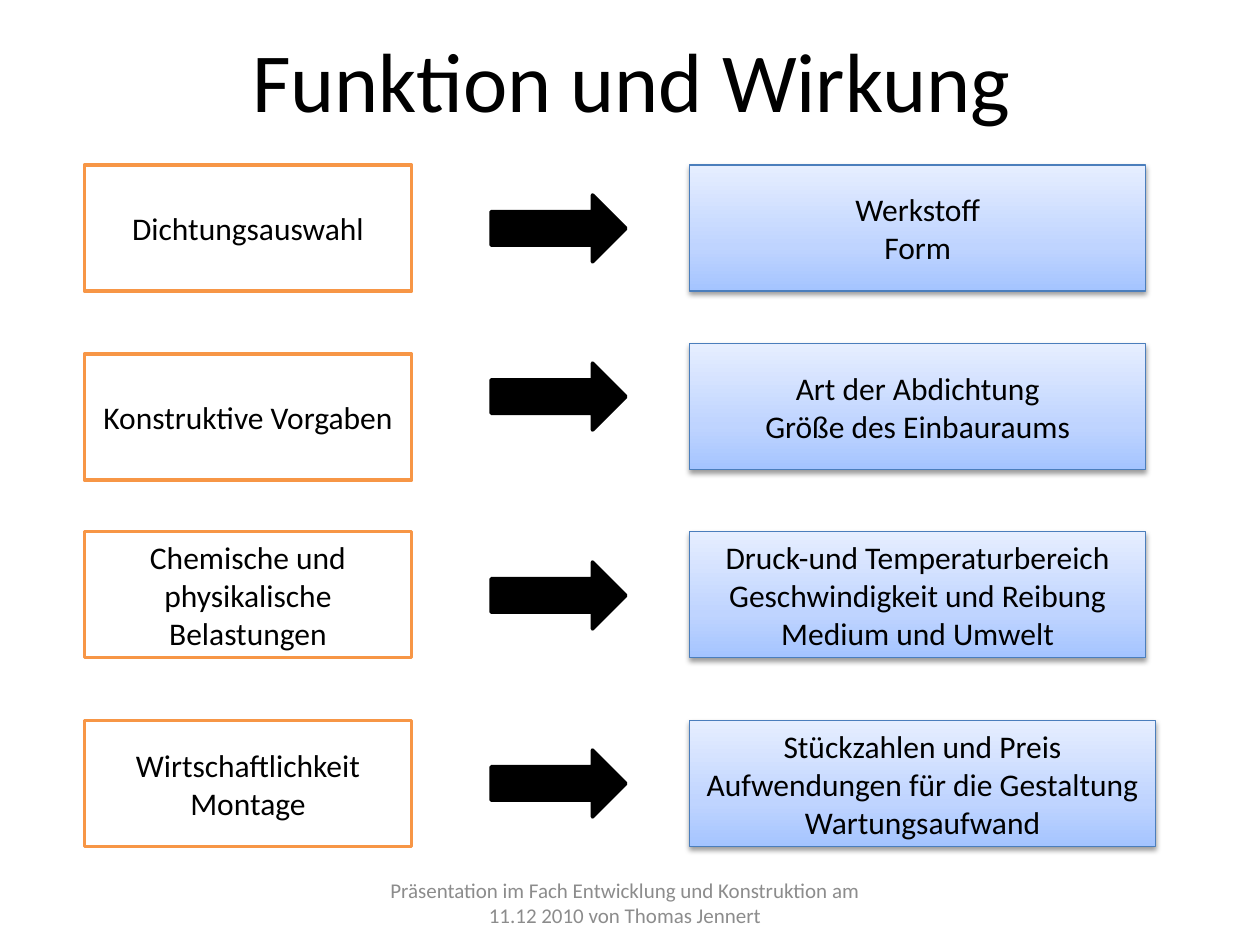
from pptx import Presentation
from pptx.dml.color import RGBColor
from pptx.enum.shapes import MSO_SHAPE as Shape
from pptx.enum.text import MSO_ANCHOR as Anchor, PP_ALIGN as Align
from pptx.oxml import parse_xml
from pptx.oxml.ns import nsdecls
from pptx.util import Cm, Pt

FONT = "Calibri"
BLACK, WHITE, GREY = "000000", "FFFFFF", "8C8C8C"
ORANGE, BLUE = "F79646", "4B7EBC"
GRADIENT_STOPS = [(0, "A4C4FF"), (35, "BFD4FF"), (100, "E6EEFF")]

TOPIC_LEFT, ARROW_LEFT, DETAIL_LEFT = 1.7, 9.9, 13.9
TOPIC_WIDTH, DETAIL_WIDTH, WIDE_DETAIL_WIDTH = 6.6, 9.2, 9.4
BOX_HEIGHT = 2.54

# topic, topic top, arrow top, details, details top, details width
ROWS = [
    ("Dichtungsauswahl", 3.33, 3.93,
     "Werkstoff\nForm", 3.33, DETAIL_WIDTH),
    ("Konstruktive Vorgaben", 7.14, 7.32,
     "Art der Abdichtung\nGröße des Einbauraums", 6.93, DETAIL_WIDTH),
    ("Chemische und physikalische Belastungen", 10.72, 11.33,
     "Druck-und Temperaturbereich\nGeschwindigkeit und Reibung\nMedium und Umwelt",
     10.72, DETAIL_WIDTH),
    ("Wirtschaftlichkeit Montage", 14.53, 15.12,
     "Stückzahlen und Preis\nAufwendungen für die Gestaltung\nWartungsaufwand",
     14.53, WIDE_DETAIL_WIDTH),
]


def color(hex_value):
    return RGBColor.from_string(hex_value)


def set_text(shape, text, size, text_color=BLACK):
    frame = shape.text_frame
    frame.text = text
    frame.word_wrap = True
    frame.vertical_anchor = Anchor.MIDDLE
    for paragraph in frame.paragraphs:
        paragraph.alignment = Align.CENTER
        for run in paragraph.runs:
            run.font.name = FONT
            run.font.size = Pt(size)
            run.font.color.rgb = color(text_color)


def add_outlined_shape(slide, kind, left, top, width, height, line_color, line_width):
    shape = slide.shapes.add_shape(kind, Cm(left), Cm(top), Cm(width), Cm(height))
    shape.line.color.rgb = color(line_color)
    shape.line.width = Pt(line_width)
    shape.shadow.inherit = False
    return shape


def fill_solid(shape, hex_value):
    shape.fill.solid()
    shape.fill.fore_color.rgb = color(hex_value)


def fill_gradient(shape):
    """Three stops, running from the bottom edge to the top."""
    shape.fill.gradient()
    shape.fill.gradient_angle = 90
    stops = "".join(
        f'<a:gs pos="{position * 1000}"><a:srgbClr val="{stop}"/></a:gs>'
        for position, stop in GRADIENT_STOPS)
    old_stops = shape.element.spPr.find(".//{*}gsLst")
    new_stops = parse_xml(f'<a:gsLst {nsdecls("a")}>{stops}</a:gsLst>')
    old_stops.getparent().replace(old_stops, new_stops)


def add_drop_shadow(shape):
    shape.element.spPr.find("{*}effectLst").append(parse_xml(
        f'<a:outerShdw {nsdecls("a")} blurRad="{Pt(3.1)}" dist="{Pt(1.6)}" '
        f'dir="5400000" rotWithShape="0"><a:srgbClr val="{BLACK}">'
        '<a:alpha val="38000"/></a:srgbClr></a:outerShdw>'))


def add_topic(slide, text, top):
    box = add_outlined_shape(slide, Shape.RECTANGLE, TOPIC_LEFT, top,
                             TOPIC_WIDTH, BOX_HEIGHT, ORANGE, 2)
    fill_solid(box, WHITE)
    set_text(box, text, 18)


def add_arrow(slide, top):
    arrow = add_outlined_shape(slide, Shape.RIGHT_ARROW, ARROW_LEFT, top,
                               2.72, 1.35, BLACK, 2)
    fill_solid(arrow, BLACK)


def add_details(slide, text, top, width):
    box = add_outlined_shape(slide, Shape.RECTANGLE, DETAIL_LEFT, top,
                             width, BOX_HEIGHT, BLUE, 0.75)
    fill_gradient(box)
    add_drop_shadow(box)
    set_text(box, text, 18)


def add_title(slide, text):
    title = slide.shapes.title
    title.left, title.top, title.width, title.height = Cm(1.3), Cm(0), Cm(22.86), Cm(3.18)
    set_text(title, text, 48)


def add_footer(slide, text):
    footer = slide.shapes.add_textbox(Cm(7.5), Cm(17.73), Cm(10.2), Cm(0.94))
    set_text(footer, text, 12, GREY)


def main():
    presentation = Presentation()
    presentation.slide_width, presentation.slide_height = Cm(25.4), Cm(19.05)
    slide = presentation.slides.add_slide(presentation.slide_layouts[5])

    add_title(slide, "Funktion und Wirkung")
    add_footer(slide, "Präsentation im Fach Entwicklung und Konstruktion am "
                      "11.12 2010 von Thomas Jennert")
    for topic, topic_top, arrow_top, details, details_top, details_width in ROWS:
        add_topic(slide, topic, topic_top)
        add_arrow(slide, arrow_top)
        add_details(slide, details, details_top, details_width)

    presentation.save("out.pptx")


if __name__ == "__main__":
    main()
